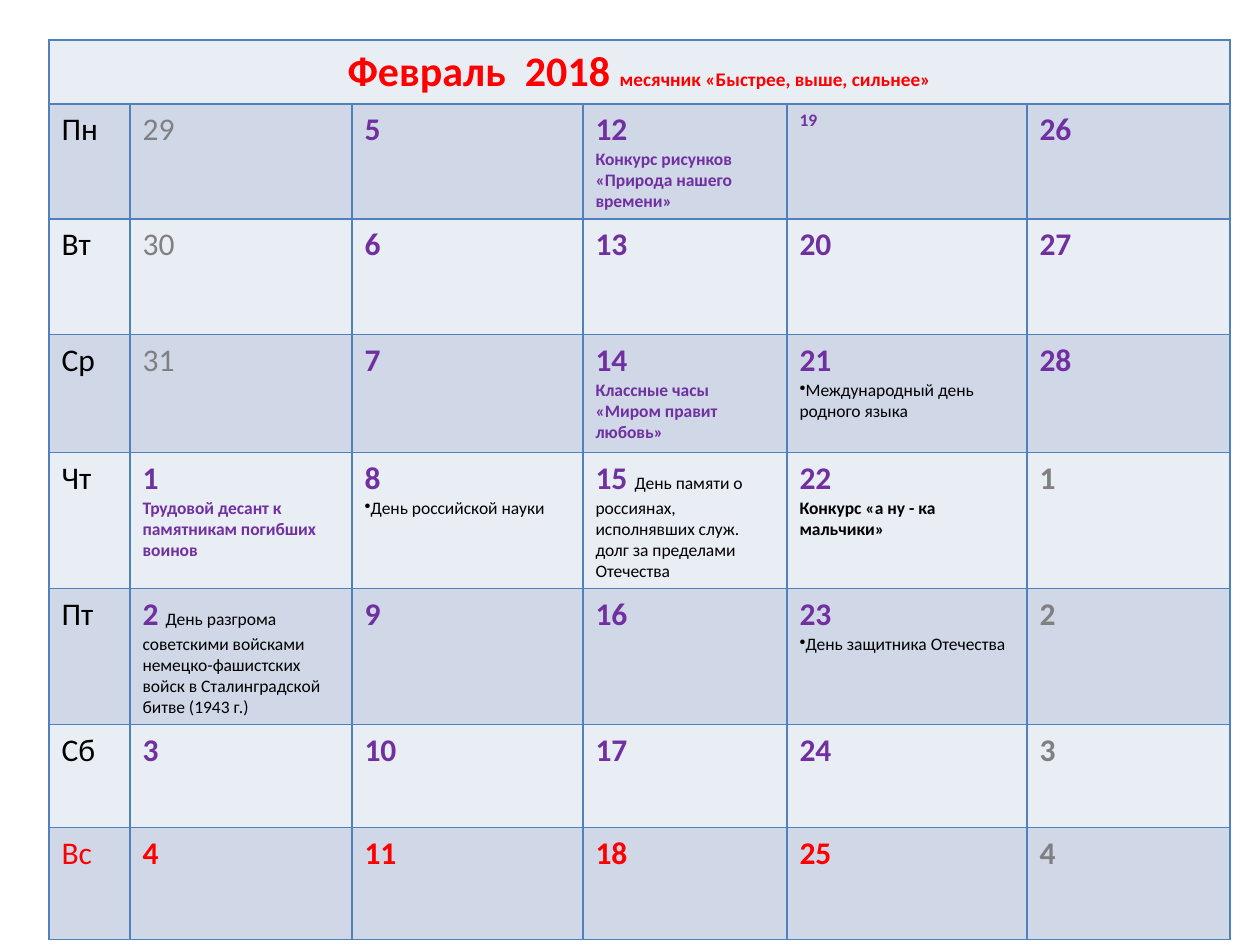
"""Build a one-page school calendar for February 2018."""
from lxml.etree import SubElement
from pptx import Presentation
from pptx.dml.color import RGBColor
from pptx.enum.text import PP_ALIGN as Align
from pptx.oxml import parse_xml
from pptx.oxml.ns import nsdecls, qn
from pptx.util import Emu, Pt

PX = 914400 / 126
RED = RGBColor(0xFF, 0x00, 0x00)
PURPLE = RGBColor(0x70, 0x30, 0xA0)
GREY = RGBColor(0x80, 0x80, 0x80)
BLACK = RGBColor(0x00, 0x00, 0x00)
BORDER = RGBColor(0x4F, 0x81, 0xBD)
BANDS = (RGBColor(0xE9, 0xED, 0xF4), RGBColor(0xD0, 0xD8, 0xE8))

COLUMNS = (81, 222, 231, 204, 240, 203)
ROWS = (64, 114, 116, 118, 136, 136, 103, 112)
DAYS = ("Пн", "Вт", "Ср", "Чт", "Пт", "Сб", "Вс")
MONTH_LENGTH, PREVIOUS_LENGTH, FIRST_WEEKDAY = 28, 31, 3
SUNDAY = 6

TITLE = dict(size=Pt(24), bold=True, color=RED)
SUBTITLE = dict(TITLE, size=Pt(11))
DAY = dict(size=Pt(18), bold=False, color=BLACK)
DATE = dict(size=Pt(18), bold=True, color=PURPLE)
NOTE = dict(size=Pt(10), bold=False, color=BLACK)
EVENT = dict(NOTE, bold=True, color=PURPLE)
CONTEST = dict(NOTE, bold=True)

INLINE_NOTES = {
    2: "День разгрома советскими войсками немецко-фашистских войск "
       "в Сталинградской битве (1943 г.)",
    15: "День памяти о россиянах, исполнявших служ. долг за пределами Отечества",
}
BULLET_NOTES = {
    8: "День российской науки",
    21: "Международный день родного языка",
    23: "День защитника Отечества",
}
EVENTS = {
    1: ("Трудовой десант к памятникам погибших воинов", EVENT),
    12: ("Конкурс рисунков «Природа нашего времени»", EVENT),
    14: ("Классные часы «Миром правит любовь»", EVENT),
    22: ("Конкурс «а ну - ка мальчики»", CONTEST),
}
SMALL_DATES = {19}


def px(length):
    """Turn whole pixels into EMU."""
    return Emu(round(length * PX))


def add_span(para, text, style):
    """Add a run with the given font values."""
    span = para.add_run()
    span.text = text
    span.font.name = "Calibri"
    for name, value in style.items():
        if name == "color":
            span.font.color.rgb = value
        else:
            setattr(span.font, name, value)


def add_bullet(para):
    """Give a paragraph a round bullet without an indent."""
    props = para._p.get_or_add_pPr()
    for name in ("marL", "indent"):
        props.set(name, "0")
    SubElement(props, qn("a:buChar")).set("char", "•")


def format_cell(cell, color):
    """Set the fill and the four borders of a cell."""
    cell.fill.solid()
    cell.fill.fore_color.rgb = color
    props = cell._tc.get_or_add_tcPr()
    for position, side in enumerate(("lnL", "lnR", "lnT", "lnB")):
        props.insert(position, parse_xml(
            f'<a:{side} {nsdecls("a")} w="{Pt(1)}"><a:solidFill>'
            f'<a:srgbClr val="{BORDER}"/></a:solidFill></a:{side}>'))


def add_calendar(page, left, top):
    """Add the empty table with its column and row sizes."""
    frame = page.shapes.add_table(len(ROWS), len(COLUMNS), px(left), px(top),
                                  px(sum(COLUMNS)), px(sum(ROWS)))
    table = frame.table
    table.first_row = table.horz_banding = False
    for column, width in zip(table.columns, COLUMNS):
        column.width = px(width)
    for index, (row, height) in enumerate(zip(table.rows, ROWS)):
        row.height = px(height)
        for cell in row.cells:
            format_cell(cell, BANDS[index % 2])
    return table


def fill_title(table):
    """Merge the top row and write the heading."""
    cell = table.cell(0, 0)
    cell.merge(table.cell(0, len(COLUMNS) - 1))
    para = cell.text_frame.paragraphs[0]
    para.alignment = Align.CENTER
    add_span(para, "Февраль  2018 ", TITLE)
    add_span(para, "месячник «Быстрее, выше, сильнее»", SUBTITLE)


def fill_date(box, week, weekday):
    """Write the date of a day and the note that belongs to it."""
    date = 7 * week + weekday - FIRST_WEEKDAY + 1
    para = box.paragraphs[0]
    if date < 1:
        add_span(para, str(date + PREVIOUS_LENGTH), dict(DAY, color=GREY))
    elif date > MONTH_LENGTH:
        add_span(para, str(date - MONTH_LENGTH), dict(DATE, color=GREY))
    elif date in INLINE_NOTES:
        add_span(para, f"{date} ", DATE)
        add_span(para, INLINE_NOTES[date], NOTE)
    else:
        style = EVENT if date in SMALL_DATES else DATE
        add_span(para, str(date), dict(style, color=RED) if weekday == SUNDAY else style)
        if date in EVENTS:
            add_span(box.add_paragraph(), *EVENTS[date])
        elif date in BULLET_NOTES:
            note = box.add_paragraph()
            add_bullet(note)
            add_span(note, BULLET_NOTES[date], NOTE)


def main():
    """Create the deck and save it."""
    deck = Presentation()
    deck.slide_width, deck.slide_height = px(1260), px(945)
    page = deck.slides.add_slide(deck.slide_layouts[6])
    table = add_calendar(page, 49, 40)
    fill_title(table)
    for weekday, name in enumerate(DAYS):
        label, *dates = table.rows[weekday + 1].cells
        style = dict(DAY, color=RED) if weekday == SUNDAY else DAY
        add_span(label.text_frame.paragraphs[0], name, style)
        for week, cell in enumerate(dates):
            fill_date(cell.text_frame, week, weekday)
    deck.save("out.pptx")


if __name__ == "__main__":
    main()
